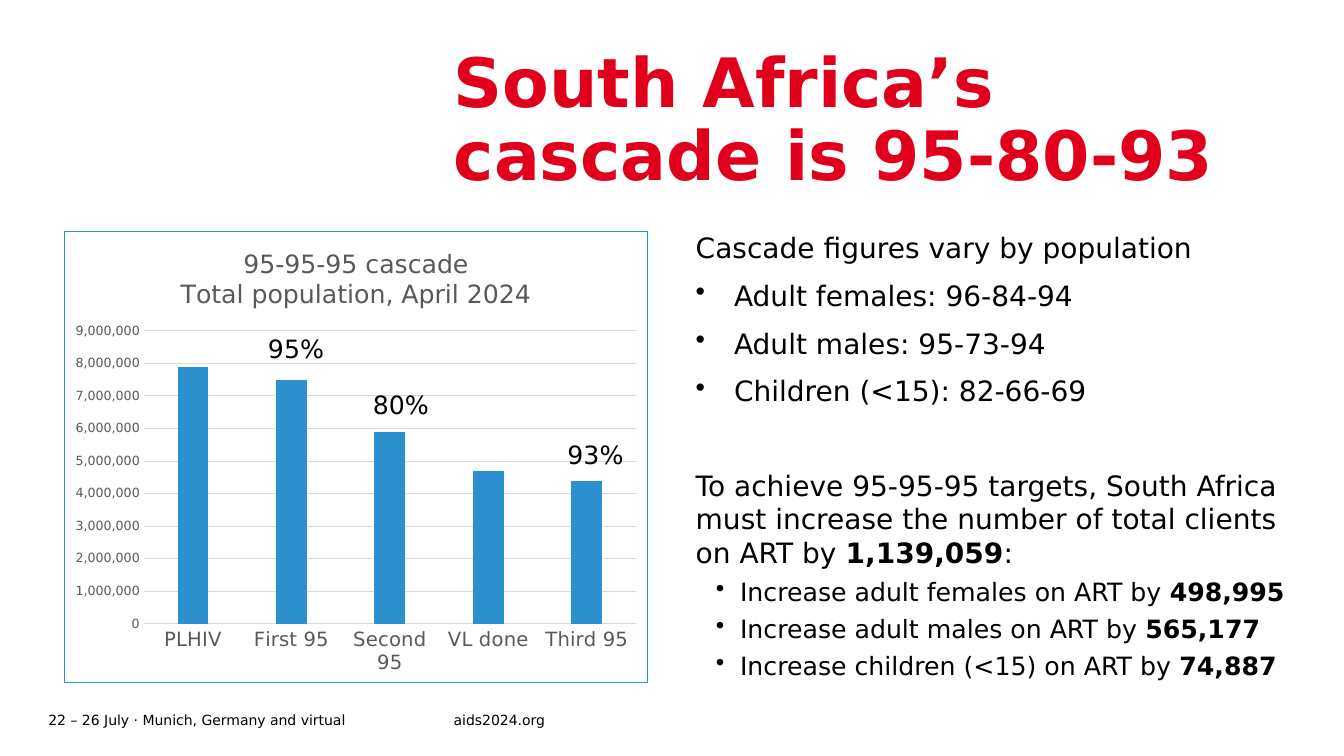
from dataclasses import dataclass

from lxml import etree
from pptx import Presentation
from pptx.chart.data import CategoryChartData
from pptx.dml.color import RGBColor
from pptx.enum.chart import XL_CHART_TYPE, XL_TICK_MARK
from pptx.enum.text import MSO_ANCHOR, MSO_AUTO_SIZE, PP_ALIGN
from pptx.oxml import parse_xml
from pptx.oxml.ns import nsdecls, qn
from pptx.util import Inches, Pt

COLUMNS = XL_CHART_TYPE.COLUMN_CLUSTERED
NO_TICK = XL_TICK_MARK.NONE
TOP, MIDDLE = MSO_ANCHOR.TOP, MSO_ANCHOR.MIDDLE
NO_FIT = MSO_AUTO_SIZE.NONE
LEFT = PP_ALIGN.LEFT


@dataclass(frozen=True)
class Theme:
    font: str = "DejaVu Sans"
    red: str = "E0001B"
    blue: str = "2C90CF"
    black: str = "000000"
    grey: str = "595959"
    rule: str = "D9D9D9"
    title: float = 48.6
    body: float = 20
    detail: float = 18
    category: float = 14
    footer: float = 10
    scale: float = 9


THEME = Theme()

TITLE = "South Africa’s cascade is 95-80-93"
FOOTERS = [
    ("22 – 26 July · Munich, Germany and virtual", 0.48, 4.02),
    ("aids2024.org", 4.5, 1.93),
]
CHART_TITLE = ["95-95-95 cascade", "Total population, April 2024"]
CASCADE = {
    "PLHIV": 7_900_000,
    "First 95": 7_500_000,
    "Second 95": 5_900_000,
    "VL done": 4_700_000,
    "Third 95": 4_400_000,
}
RATES = [("95%", 2.56, 3.26), ("80%", 3.6, 3.81), ("93%", 5.53, 4.31)]

# Each style: level, left margin, hanging indent, space before, size
STYLES = {
    "lead": (0, 0, 0, 10, THEME.body),
    "group": (0, 0.38, 0.38, 10, THEME.body),
    "target": (0, 0, 0, 43.5, THEME.body),
    "increase": (1, 0.44, 0.24, 5, THEME.detail),
}
# Every second piece of a paragraph is bold
FINDINGS = [
    ("lead", ["Cascade figures vary by population"]),
    ("group", ["Adult females: 96-84-94"]),
    ("group", ["Adult males: 95-73-94"]),
    ("group", ["Children (<15): 82-66-69"]),
    ("target", ["To achieve 95-95-95 targets, South Africa must increase "
                "the number of total clients on ART by ", "1,139,059", ":"]),
    ("increase", ["Increase adult females on ART by ", "498,995"]),
    ("increase", ["Increase adult males on ART by ", "565,177"]),
    ("increase", ["Increase children (<15) on ART by ", "74,887"]),
]


def set_font(font, size, color, bold=False):
    font.name = THEME.font
    font.size = Pt(size)
    font.bold = bold
    font.color.rgb = RGBColor.from_string(color)


def set_line(line, color):
    line.color.rgb = RGBColor.from_string(color)
    line.width = Pt(0.75)


def set_frame(frame, anchor, inset=0):
    frame.word_wrap = True
    frame.auto_size = NO_FIT
    frame.vertical_anchor = anchor
    frame.margin_left = frame.margin_right = Inches(inset)
    frame.margin_top = frame.margin_bottom = Inches(inset / 2)


def add_label(slide, text, box, size, anchor, inset=0):
    frame = slide.shapes.add_textbox(*map(Inches, box)).text_frame
    set_frame(frame, anchor, inset)
    frame.text = text
    set_font(frame.paragraphs[0].font, size, THEME.black)


def add_title(slide):
    title = slide.shapes.title
    title.left, title.top, title.width, title.height = map(
        Inches, (4.5, 0.48, 8.35, 1.34))
    set_frame(title.text_frame, TOP)
    title.text_frame.text = TITLE
    paragraph = title.text_frame.paragraphs[0]
    paragraph.alignment = LEFT
    paragraph.line_spacing = 0.9
    set_font(paragraph.font, THEME.title, THEME.red, bold=True)


def add_cascade_chart(slide):
    data = CategoryChartData(number_format="#,##0")
    data.categories = list(CASCADE)
    data.add_series("Series 1", list(CASCADE.values()))
    box = map(Inches, (0.63, 2.29, 5.8, 4.49))
    chart = slide.shapes.add_chart(COLUMNS, *box, data).chart
    set_font(chart.font, THEME.footer, THEME.black)
    chart.has_legend = False

    heading = chart.chart_title.text_frame
    heading.text = "\n".join(CHART_TITLE)
    for paragraph in heading.paragraphs:
        set_font(paragraph.font, THEME.detail, THEME.grey)
    chart.chart_title.include_in_layout = False

    columns = chart.plots[0]
    columns.gap_width, columns.overlap = 219, -27
    columns.vary_by_categories = False
    fill = columns.series[0].format.fill
    fill.solid()
    fill.fore_color.rgb = RGBColor.from_string(THEME.blue)

    for axis, size in ((chart.category_axis, THEME.category),
                       (chart.value_axis, THEME.scale)):
        axis.major_tick_mark = axis.minor_tick_mark = NO_TICK
        set_font(axis.tick_labels.font, size, THEME.grey)
    set_line(chart.category_axis.format.line, THEME.rule)

    scale = chart.value_axis
    scale.minimum_scale, scale.maximum_scale = 0, 9_000_000
    scale.major_unit = 1_000_000
    scale.format.line.fill.background()
    scale.has_major_gridlines = True
    set_line(scale.major_gridlines.format.line, THEME.rule)
    scale.tick_labels.number_format = "#,##0"
    scale.tick_labels.number_format_is_linked = False
    add_border(chart)


def add_border(chart):
    border = parse_xml(
        f'<c:spPr {nsdecls("c", "a")}><a:noFill/><a:ln w="{Pt(0.75)}"><a:solidFill>'
        f'<a:srgbClr val="{THEME.blue}"/></a:solidFill></a:ln></c:spPr>')
    chart.element.find(qn("c:chart")).addnext(border)


def add_findings(slide):
    box = map(Inches, (6.9, 2.29, 5.95, 4.49))
    frame = slide.shapes.add_textbox(*box).text_frame
    set_frame(frame, TOP)
    for index, (style, pieces) in enumerate(FINDINGS):
        level, margin, hanging, before, size = STYLES[style]
        paragraph = frame.add_paragraph() if index else frame.paragraphs[0]
        paragraph.level = level
        if hanging:
            properties = paragraph._p.get_or_add_pPr()
            properties.set("marL", str(Inches(margin)))
            properties.set("indent", str(-Inches(hanging)))
            etree.SubElement(properties, qn("a:buChar"), char="•")
        paragraph.space_before = Pt(before if index else 0)
        set_font(paragraph.font, size, THEME.black)
        for position, piece in enumerate(pieces):
            run = paragraph.add_run()
            run.text = piece
            if position % 2:
                run.font.bold = True


def main():
    deck = Presentation()
    deck.slide_width, deck.slide_height = Inches(13.33), Inches(7.5)
    slide = deck.slides.add_slide(deck.slide_layouts[5])
    add_title(slide)
    for text, left, width in FOOTERS:
        add_label(slide, text, (left, 7.02, width, 0.24), THEME.footer, MIDDLE)
    add_cascade_chart(slide)
    add_findings(slide)
    for rate, left, top in RATES:
        add_label(slide, rate, (left, top, 0.9, 0.4), THEME.detail, TOP, inset=0.1)
    deck.save("out.pptx")


if __name__ == "__main__":
    main()
